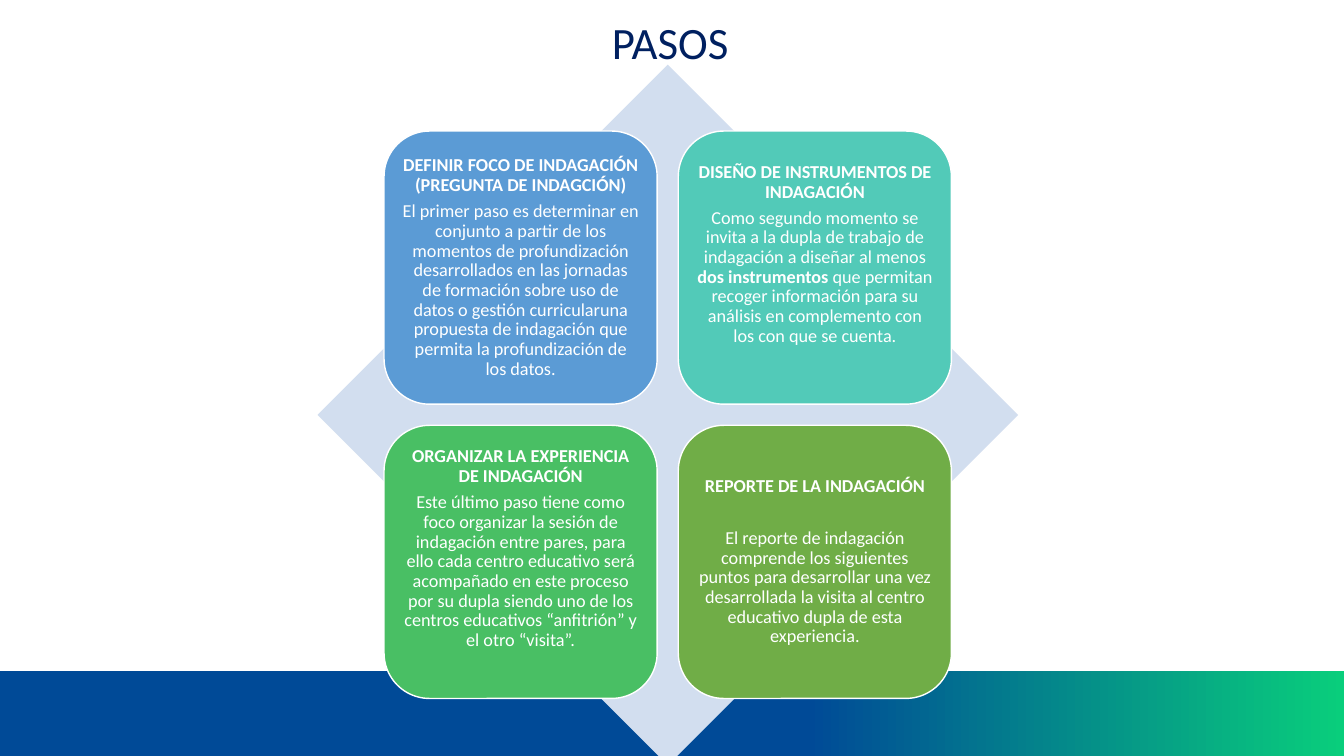
from pptx import Presentation
from pptx.dml.color import RGBColor
from pptx.enum.shapes import MSO_SHAPE as Preset
from pptx.enum.text import MSO_ANCHOR as Anchor, PP_ALIGN as Align
from pptx.util import Pt

COLORS = {
    "white": "FFFFFF",
    "title": "002060",
    "diamond": "D2DEEF",
    "band_start": "004A97",
    "band_end": "09CE7C",
    "focus": "5B9BD5",
    "instruments": "52CAB8",
    "organize": "49BF64",
    "report": "70AD47",
}
FONT = "Calibri"
SLIDE_WIDTH, SLIDE_HEIGHT = 960, 540
GRID_LEFT, GRID_TOP = 274.3, 93.6
CARD_SIZE, CARD_PITCH = 195.1, 210.2
CARD_INSET = 3.6
HEADING_GAP, WIDE_GAP = 4.55, 23
RAISED = 18.7

STEPS = [
    ("focus", "DEFINIR FOCO DE INDAGACIÓN (PREGUNTA DE INDAGCIÓN)",
     ["El primer paso es determinar en conjunto a partir de los momentos de "
      "profundización desarrollados en las jornadas de formación sobre uso de "
      "datos o gestión curricularuna propuesta de indagación que permita la "
      "profundización de los datos."], HEADING_GAP, 0),
    ("instruments", "DISEÑO DE INSTRUMENTOS DE INDAGACIÓN",
     ["Como segundo momento se invita a la dupla de trabajo de indagación a "
      "diseñar al menos ", "dos instrumentos",
      " que permitan recoger información para su análisis en complemento con "
      "los con que se cuenta."], HEADING_GAP, RAISED),
    ("organize", "ORGANIZAR LA EXPERIENCIA DE INDAGACIÓN",
     ["Este último paso tiene como foco organizar la sesión de indagación entre "
      "pares, para ello cada centro educativo será acompañado en este proceso "
      "por su dupla siendo uno de los centros educativos “anfitrión” y el otro "
      "“visita”."], HEADING_GAP, RAISED),
    ("report", "REPORTE DE LA INDAGACIÓN",
     ["El reporte de indagación comprende los siguientes puntos para "
      "desarrollar una vez desarrollada la visita al centro educativo dupla de "
      "esta experiencia."], WIDE_GAP, 0),
]


def color(name):
    return RGBColor.from_string(COLORS[name])


def add_preset(page, preset, left, top, width, height, fill=None):
    shape = page.shapes.add_shape(preset, Pt(left), Pt(top), Pt(width), Pt(height))
    shape.shadow.inherit = False
    shape.line.fill.background()
    if fill:
        shape.fill.solid()
        shape.fill.fore_color.rgb = color(fill)
    return shape


def add_band(page):
    band = add_preset(page, Preset.RECTANGLE, 0, 479, SLIDE_WIDTH, 61)
    band.fill.gradient()
    band.fill.gradient_angle = 0
    stops = zip(band.fill.gradient_stops, (0.6, 1), ("band_start", "band_end"))
    for stop, position, name in stops:
        stop.position = position
        stop.color.rgb = color(name)


def format_span(span, size, name, bold=False):
    span.font.name = FONT
    span.font.size = Pt(size)
    span.font.bold = bold
    span.font.color.rgb = color(name)


def format_para(para):
    para.alignment = Align.CENTER
    para.line_spacing = 0.9


def add_title(page, text):
    box = page.shapes.add_textbox(Pt(64.8), Pt(10), Pt(828), Pt(44.6))
    frame = box.text_frame
    frame.word_wrap = True
    frame.vertical_anchor = Anchor.MIDDLE
    frame.text = text
    para = frame.paragraphs[0]
    format_para(para)
    format_span(para.runs[0], 32, "title")


def add_card(page, left, top, fill, heading, body, gap, raised):
    card = add_preset(page, Preset.ROUNDED_RECTANGLE, left, top,
                      CARD_SIZE, CARD_SIZE, fill)
    card.line.color.rgb = color("white")
    card.line.width = Pt(1)
    frame = card.text_frame
    frame.word_wrap = True
    frame.vertical_anchor = Anchor.MIDDLE
    frame.margin_left = frame.margin_right = frame.margin_top = Pt(CARD_INSET)
    frame.margin_bottom = Pt(CARD_INSET + raised)
    frame.text = heading
    heading_para = frame.paragraphs[0]
    format_para(heading_para)
    heading_para.space_after = Pt(gap)
    format_span(heading_para.runs[0], 13, "white", bold=True)
    body_para = frame.add_paragraph()
    format_para(body_para)
    body_para.space_after = Pt(HEADING_GAP)
    for index, text in enumerate(body):
        span = body_para.add_run()
        span.text = text
        format_span(span, 13, "white", bold=index % 2 == 1)


def main():
    deck = Presentation()
    deck.slide_width, deck.slide_height = Pt(SLIDE_WIDTH), Pt(SLIDE_HEIGHT)
    page = deck.slides.add_slide(deck.slide_layouts[6])
    add_band(page)
    add_title(page, "PASOS")
    add_preset(page, Preset.DIAMOND, 226.8, 46.2, 500.4, 500.4, "diamond")
    for index, step in enumerate(STEPS):
        row, column = divmod(index, 2)
        add_card(page, GRID_LEFT + column * CARD_PITCH,
                 GRID_TOP + row * CARD_PITCH, *step)
    deck.save("out.pptx")


if __name__ == "__main__":
    main()
